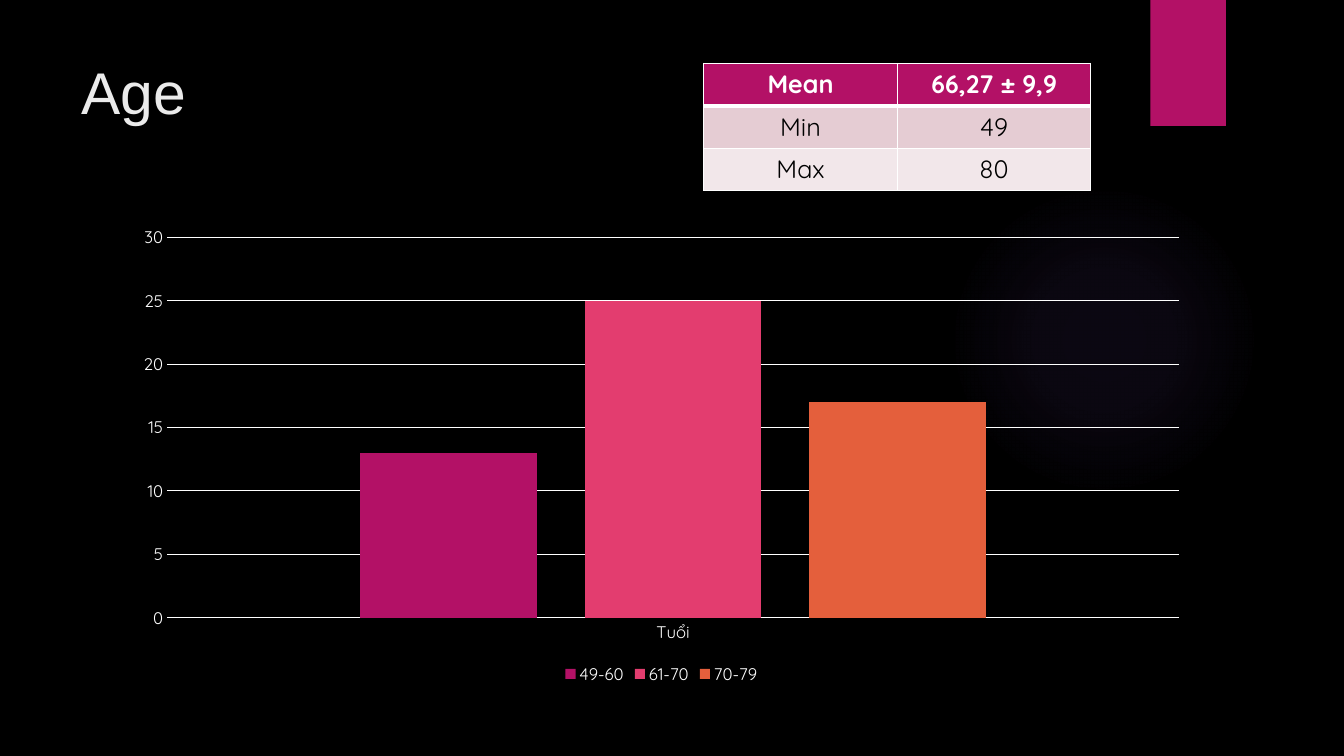
from dataclasses import dataclass

from lxml.etree import SubElement
from pptx import Presentation
from pptx.chart.data import CategoryChartData
from pptx.dml.color import RGBColor
from pptx.enum.chart import XL_CHART_TYPE as ChartType
from pptx.enum.chart import XL_LEGEND_POSITION as LegendPosition
from pptx.enum.chart import XL_TICK_MARK as TickMark
from pptx.enum.shapes import MSO_SHAPE as Preset
from pptx.enum.text import MSO_ANCHOR as Anchor
from pptx.enum.text import MSO_AUTO_SIZE as AutoSize
from pptx.enum.text import PP_ALIGN as Align
from pptx.oxml.ns import qn
from pptx.util import Inches, Pt


@dataclass(frozen=True)
class Theme:
    """Colours, fonts and type sizes of the slide."""
    background: str = "000000"
    accent: str = "B31166"
    glow: str = "9B6BF2"
    title: str = "EBEBEB"
    light: str = "FFFFFF"
    dark: str = "000000"
    bands: tuple = ("E5CCD3", "F2E7EA")
    bars: tuple = ("B31166", "E33D6F", "E45F3C")
    title_font: str = "Arial"
    body_font: str = "Quicksand"
    title_size: int = 42
    table_size: int = 18
    label_size: int = 12
    chart_size: int = 10


THEME = Theme()
STATISTICS = [("Mean", "66,27 ± 9,9"), ("Min", "49"), ("Max", "80")]
AGE_GROUPS = {"49-60": 13, "61-70": 25, "70-79": 17}


def paint(fill, color):
    """Give a fill one solid colour."""
    fill.solid()
    fill.fore_color.rgb = RGBColor.from_string(color)


def format_font(font, size, color=THEME.light, name=THEME.body_font, bold=False):
    """Set the look of a font."""
    font.name, font.size, font.bold = name, Pt(size), bold
    font.color.rgb = RGBColor.from_string(color)


def write_text(frame, text, align=Align.LEFT, **font_format):
    """Write one formatted paragraph into a text frame."""
    paragraph = frame.paragraphs[0]
    paragraph.alignment = align
    run = paragraph.add_run()
    run.text = text
    format_font(run.font, **font_format)


def add_decoration(slide, preset, left, top, width, height):
    """Add a plain accent shape behind the title."""
    shape = slide.shapes.add_shape(
        preset, Inches(left), Inches(top), Inches(width), Inches(height))
    shape.shadow.inherit = False
    shape.line.fill.background()
    paint(shape.fill, THEME.accent)
    slide.shapes.title.element.addprevious(shape.element)
    return shape


def apply_glow(shape, color, stops):
    """Replace a solid fill by a transparent radial gradient."""
    solid = shape.element.spPr.find(qn("a:solidFill"))
    gradient = solid.makeelement(qn("a:gradFill"), {"rotWithShape": "1"})
    stop_list = SubElement(gradient, qn("a:gsLst"))
    for position, opacity in stops:
        stop = SubElement(stop_list, qn("a:gs"), pos=str(position * 1000))
        stop_color = SubElement(stop, qn("a:srgbClr"), val=color)
        SubElement(stop_color, qn("a:alpha"), val=str(opacity * 1000))
    center = SubElement(gradient, qn("a:path"), {"path": "circle"})
    SubElement(center, qn("a:fillToRect"), dict.fromkeys("ltrb", "50000"))
    solid.getparent().replace(solid, gradient)


def place_title(slide, text):
    """Position and fill the title placeholder."""
    title = slide.shapes.title
    title.left, title.top = Inches(0.71), Inches(0.5)
    title.width, title.height = Inches(10.29), Inches(1.53)
    frame = title.text_frame
    frame.auto_size, frame.vertical_anchor = AutoSize.NONE, Anchor.TOP
    write_text(frame, text, size=THEME.title_size,
               color=THEME.title, name=THEME.title_font)


def add_borders(cell, color, widths):
    """Draw the four borders of a table cell, ahead of its fill."""
    properties = cell._tc.get_or_add_tcPr()
    for index, (side, width) in enumerate(widths.items()):
        line = properties.makeelement(qn(f"a:ln{side}"), {"w": str(Pt(width))})
        line_fill = SubElement(line, qn("a:solidFill"))
        SubElement(line_fill, qn("a:srgbClr"), val=color)
        properties.insert(index, line)


def add_statistics_table(slide, rows):
    """Add the table with an accent header row and banded body rows."""
    table = slide.shapes.add_table(
        len(rows), len(rows[0]), Inches(6.98), Inches(0.63),
        Inches(3.84), Inches(1.26)).table
    for row_index, row in enumerate(rows):
        header = row_index == 0
        fill = THEME.accent if header else THEME.bands[(row_index - 1) % 2]
        widths = {"L": 1, "R": 1, "T": 3 if row_index == 1 else 1,
                  "B": 3 if header else 1}
        for column_index, text in enumerate(row):
            cell = table.cell(row_index, column_index)
            paint(cell.fill, fill)
            add_borders(cell, THEME.light, widths)
            write_text(cell.text_frame, text, align=Align.CENTER,
                       size=THEME.table_size, bold=header,
                       color=THEME.light if header else THEME.dark)


def format_line(line):
    """Make a chart line thin and light."""
    line.width = Pt(0.75)
    line.color.rgb = RGBColor.from_string(THEME.light)


def add_age_chart(slide, category, groups):
    """Add the clustered column chart of the age groups."""
    data = CategoryChartData()
    data.categories = [category]
    for name, count in groups.items():
        data.add_series(name, [count])
    chart = slide.shapes.add_chart(
        ChartType.COLUMN_CLUSTERED, Inches(1.21), Inches(2.16),
        Inches(10.7), Inches(4.67), data).chart
    format_font(chart.font, THEME.chart_size)
    chart.has_title = False
    chart.has_legend = True
    chart.legend.position = LegendPosition.BOTTOM
    chart.legend.include_in_layout = False
    format_font(chart.legend.font, THEME.label_size)

    plot = chart.plots[0]
    plot.vary_by_categories = False
    plot.gap_width, plot.overlap = 219, -27
    for series, color in zip(plot.series, THEME.bars):
        paint(series.format.fill, color)

    for axis in (chart.category_axis, chart.value_axis):
        axis.major_tick_mark = axis.minor_tick_mark = TickMark.NONE
        format_font(axis.tick_labels.font, THEME.label_size)
    format_line(chart.category_axis.format.line)
    values = chart.value_axis
    values.minimum_scale, values.maximum_scale, values.major_unit = 0, 30, 5
    values.format.line.fill.background()
    format_line(values.major_gridlines.format.line)


def main():
    """Build and save the slide."""
    presentation = Presentation()
    presentation.slide_width, presentation.slide_height = Inches(13.33), Inches(7.5)
    slide = presentation.slides.add_slide(presentation.slide_layouts[5])
    paint(slide.background.fill, THEME.background)
    glow = add_decoration(slide, Preset.OVAL, 9.41, 1.83, 3.08, 3.08)
    apply_glow(glow, THEME.glow, [(0, 7), (36, 6), (69, 0)])
    add_decoration(slide, Preset.RECTANGLE, 11.41, 0, 0.75, 1.25)
    place_title(slide, "Age")
    add_statistics_table(slide, STATISTICS)
    add_age_chart(slide, "Tuổi", AGE_GROUPS)
    presentation.save("out.pptx")


if __name__ == "__main__":
    main()
